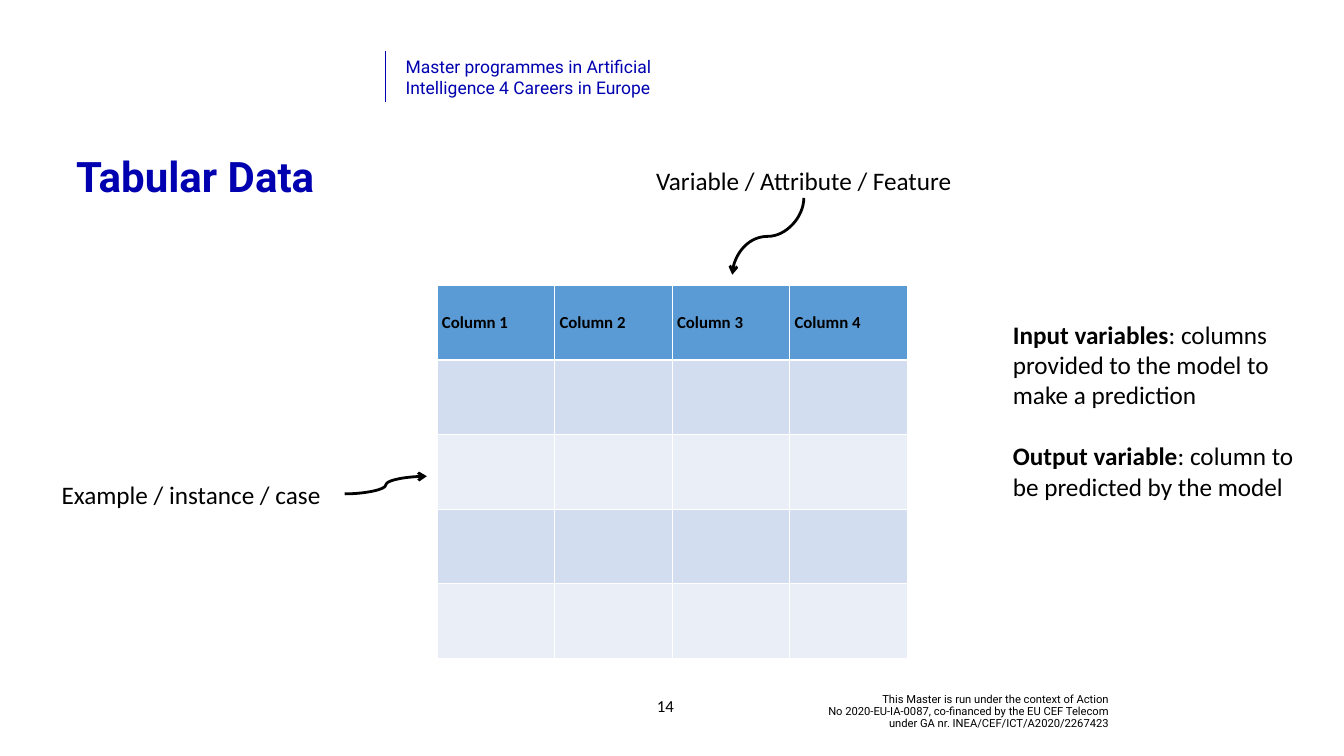
import pptx
import pptx.util
import pptx.dml.color
import pptx.enum.shapes
import pptx.enum.text
import pptx.oxml
import pptx.oxml.ns

COLORS = {"navy": "0000B0", "black": "000000", "white": "FFFFFF",
          "header": "5B9BD5", "odd": "D2DEEF", "even": "EAEFF7"}
NS = pptx.oxml.ns.nsdecls("a")
ALIGN = pptx.enum.text.PP_ALIGN
ANCHOR = pptx.enum.text.MSO_ANCHOR
CONNECTOR = pptx.enum.shapes.MSO_CONNECTOR

deck = pptx.Presentation()
deck.slide_width = pptx.util.Inches(26.67)
deck.slide_height = pptx.util.Inches(15)
column = deck.slide_width / 100
row = deck.slide_height / 100
slide = deck.slides.add_slide(deck.slide_layouts[5])


def write(frame, text, size, font="Calibri", color="black", bold=False, align=ALIGN.LEFT,
          anchor=ANCHOR.MIDDLE, spacing=None, gap=0, inset=None):
    frame.word_wrap = True
    frame.vertical_anchor = anchor
    if inset is not None:
        frame.margin_left = frame.margin_right = pptx.util.Inches(inset)
        frame.margin_top = frame.margin_bottom = pptx.util.Inches(inset)
    paragraphs = [[(text, bold)]] if isinstance(text, str) else text
    for index, runs in enumerate(paragraphs):
        paragraph = frame.add_paragraph() if index else frame.paragraphs[0]
        paragraph.alignment = align
        paragraph.line_spacing = spacing
        paragraph.space_before = pptx.util.Pt(gap if index else 0)
        for words, heavy in runs:
            for number, line in enumerate(words.split("\n")):
                if number:
                    paragraph.add_line_break()
                run = paragraph.add_run()
                run.text = line
                run.font.size = pptx.util.Pt(size)
                run.font.name = font
                run.font.bold = heavy
                run.font.color.rgb = pptx.dml.color.RGBColor.from_string(COLORS[color])


def connect(kind, start, end, color, weight, arrow=False, turn=0):
    link = slide.shapes.add_connector(kind, int(start[0] * column), int(start[1] * row),
                                      int(end[0] * column), int(end[1] * row))
    link.line.color.rgb = pptx.dml.color.RGBColor.from_string(COLORS[color])
    link.line.width = pptx.util.Pt(weight)
    properties = link._element.spPr
    if turn:
        properties.xfrm.set("rot", str(turn * 60000))
    if arrow:
        properties.ln.append(pptx.oxml.parse_xml(f'<a:tailEnd {NS} type="arrow"/>'))
    properties.append(pptx.oxml.parse_xml(f"<a:effectLst {NS}/>"))


title = slide.shapes.title
title.left, title.top = int(5.29 * column), int(19.73 * row)
title.width, title.height = int(88.53 * column), int(11.33 * row)
write(title.text_frame, "Tabular Data", 60, font="Roboto", color="navy", bold=True,
      anchor=ANCHOR.TOP, spacing=pptx.util.Pt(70))
title.text_frame.auto_size = pptx.enum.text.MSO_AUTO_SIZE.NONE

definitions = [
    [("Input variables", True), (": columns provided to the model to make a prediction", False)],
    [("Output variable", True), (": column to be predicted by the model", False)],
]
centred = {"align": ALIGN.CENTER, "inset": 0.06}
texts = [
    ((56.32, 91.6, 26.55, 5.07),
     "This Master is run under the context of Action\n"
     "No 2020-EU-IA-0087, co-financed by the EU CEF Telecom\n"
     "under GA nr. INEA/CEF/ICT/A2020/2267423",
     16, {"font": "Roboto", "align": ALIGN.RIGHT, "spacing": 0.9}),
    ((29.81, 7.07, 23.88, 6.27),
     "Master programmes in Artificial\nIntelligence 4 Careers in Europe",
     25, {"font": "Roboto", "color": "navy", "anchor": ANCHOR.TOP}),
    ((2.81, 63, 22.8, 4.8), "Example / instance / case", 36, centred),
    ((45.14, 21.4, 29.32, 4.8), "Variable / Attribute / Feature", 36, centred),
    ((75.14, 37.73, 21.37, 33.07), definitions, 36, {"gap": 44, "inset": 0.06}),
    ((47.43, 90.73, 4.16, 5.33), "14", 24, {"align": ALIGN.CENTER}),
]
for (left, top, width, height), text, size, style in texts:
    box = slide.shapes.add_textbox(int(left * column), int(top * row),
                                   int(width * column), int(height * row))
    write(box.text_frame, text, size, **style)

data = slide.shapes.add_table(5, 4, int(32.51 * column), int(37.73 * row),
                              int(34.98 * column), int(49.33 * row)).table
for r in range(5):
    for c in range(4):
        cell = data.cell(r, c)
        edges = {"L": 1, "R": 1, "T": 3 if r == 1 else 1, "B": 3 if r == 0 else 1}
        for side, weight in edges.items():
            cell._tc.get_or_add_tcPr().append(pptx.oxml.parse_xml(
                f'<a:ln{side} {NS} w="{weight * 12700}"><a:solidFill>'
                f'<a:srgbClr val="{COLORS["white"]}"/></a:solidFill></a:ln{side}>'))
        shade = "header" if r == 0 else "odd" if r % 2 else "even"
        cell.fill.solid()
        cell.fill.fore_color.rgb = pptx.dml.color.RGBColor.from_string(COLORS[shade])
        if r == 0:
            write(cell.text_frame, f"Column {c + 1}", 24, bold=True)
            cell.vertical_anchor = ANCHOR.MIDDLE

connect(CONNECTOR.STRAIGHT, (28.68, 6.73), (28.68, 13.53), "navy", 0.5)
connect(CONNECTOR.CURVE, (25.65, 65.33), (31.76, 63), "black", 4, arrow=True)
connect(CONNECTOR.CURVE, (54.29, 26.53), (60, 36), "black", 4, arrow=True, turn=90)

deck.save("out.pptx")
